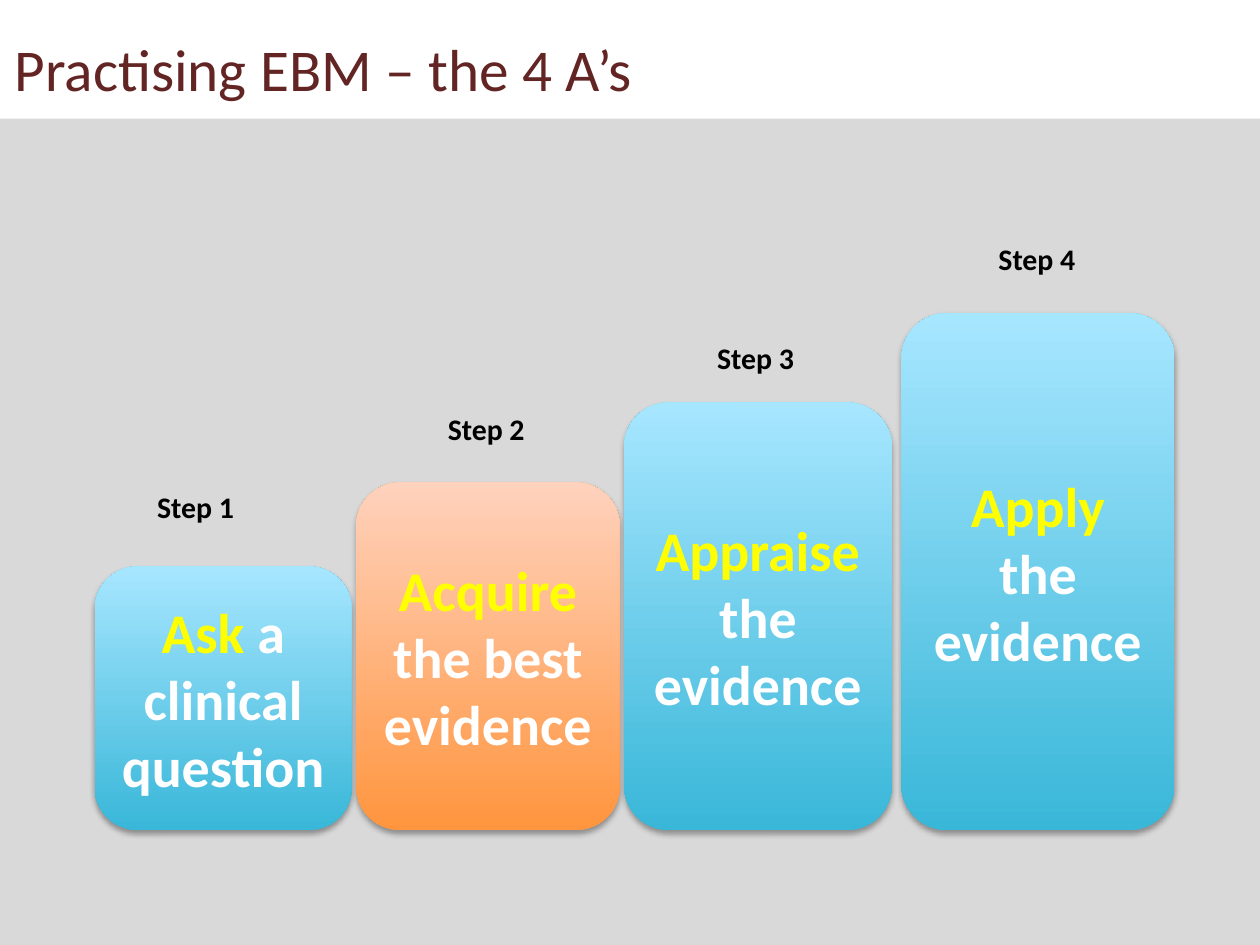
from dataclasses import dataclass

from lxml import etree
from pptx import Presentation
from pptx import util as u
from pptx.dml.color import RGBColor
from pptx.enum import shapes, text
from pptx.oxml import ns


@dataclass(frozen=True)
class Theme:
    """Colours, font and type sizes of the slide."""
    font: str = "Calibri"
    title: str = "632523"
    panel: str = "D9D9D9"
    label: str = "000000"
    keyword: str = "FFFF00"
    body: str = "FFFFFF"
    blue: tuple = ("39B7D8", "A7E6FF")
    orange: tuple = ("FF953E", "FFD2BD")
    title_size: float = 32
    step_size: float = 30.2
    label_size: float = 16.1


class StairSlide:
    """Draws the parts of a staircase slide in one theme."""

    def __init__(self, slide, theme):
        self.slide = slide
        self.theme = theme

    def add_run(self, paragraph, words, size, color, bold=True):
        """Append one styled run."""
        run = paragraph.add_run()
        run.text = words
        run.font.name = self.theme.font
        run.font.size = u.Pt(size)
        run.font.bold = bold
        run.font.color.rgb = RGBColor.from_string(color)

    def title(self, words, *box):
        """Place and style the title placeholder."""
        heading = self.slide.shapes.title
        heading.left, heading.top, heading.width, heading.height = map(u.Inches, box)
        frame = heading.text_frame
        frame.vertical_anchor = text.MSO_ANCHOR.MIDDLE
        frame.paragraphs[0].alignment = text.PP_ALIGN.LEFT
        self.add_run(frame.paragraphs[0], words, self.theme.title_size,
                     self.theme.title, bold=False)

    def block(self, kind, *box):
        """Add a preset shape without line or shadow."""
        block = self.slide.shapes.add_shape(kind, *map(u.Inches, box))
        block.line.fill.background()
        block.shadow.inherit = False
        return block

    def panel(self, *box):
        """Add the plain backdrop."""
        panel = self.block(shapes.MSO_SHAPE.RECTANGLE, *box)
        panel.fill.solid()
        panel.fill.fore_color.rgb = RGBColor.from_string(self.theme.panel)

    def drop_shadow(self, block):
        """Add a soft shadow below a shape."""
        effects = block._element.spPr.find(ns.qn("a:effectLst"))
        shadow = etree.SubElement(
            effects, ns.qn("a:outerShdw"), blurRad=str(u.Pt(3.1)),
            dist=str(u.Pt(1.8)), dir="5400000", rotWithShape="0")
        color = etree.SubElement(shadow, ns.qn("a:srgbClr"), val="000000")
        etree.SubElement(color, ns.qn("a:alpha"), val="35000")

    def step(self, keyword, rest, gradient, *box):
        """Add one stair with its highlighted keyword."""
        stair = self.block(shapes.MSO_SHAPE.ROUNDED_RECTANGLE, *box)
        stair.fill.gradient()
        stair.fill.gradient_angle = 90
        for stop, position, color in zip(stair.fill.gradient_stops, (0, 1), gradient):
            stop.position = position
            stop.color.rgb = RGBColor.from_string(color)
        self.drop_shadow(stair)
        frame = stair.text_frame
        frame.word_wrap = True
        frame.vertical_anchor = text.MSO_ANCHOR.MIDDLE
        paragraph = frame.paragraphs[0]
        paragraph.alignment = text.PP_ALIGN.CENTER
        self.add_run(paragraph, keyword, self.theme.step_size, self.theme.keyword)
        self.add_run(paragraph, rest, self.theme.step_size, self.theme.body)

    def label(self, words, *box):
        """Add a step label above a stair."""
        label = self.slide.shapes.add_textbox(*map(u.Inches, box))
        frame = label.text_frame
        frame.word_wrap = False
        frame.auto_size = text.MSO_AUTO_SIZE.SHAPE_TO_FIT_TEXT
        self.add_run(frame.paragraphs[0], words, self.theme.label_size, self.theme.label)


def main():
    """Build and save the slide."""
    deck = Presentation()
    deck.slide_width, deck.slide_height = u.Inches(9.45), u.Inches(7.09)
    theme = Theme()
    stairs = StairSlide(deck.slides.add_slide(deck.slide_layouts[5]), theme)
    stairs.panel(0, 0.89, 9.45, 6.2)
    stairs.title("Practising EBM – the 4 A’s", 0.01, 0.14, 5.51, 0.74)

    floor = 6.23
    steps = [
        ("Ask", " a clinical question", theme.blue, 0.71, 4.25, 1.93, 1.08, 3.62),
        ("Acquire", " the best evidence", theme.orange, 2.67, 3.62, 1.98, 3.26, 3.03),
        ("Appraise", " the evidence", theme.blue, 4.68, 3.02, 2.01, 5.28, 2.5),
        ("Apply", " the evidence", theme.blue, 6.76, 2.35, 2.05, 7.39, 1.76),
    ]
    for number, step in enumerate(steps, 1):
        keyword, rest, gradient, left, top, width, label_left, label_top = step
        stairs.step(keyword, rest, gradient, left, top, width, floor - top)
        stairs.label(f"Step {number}", label_left, label_top, 0.78, 0.37)

    deck.save("out.pptx")


if __name__ == "__main__":
    main()
